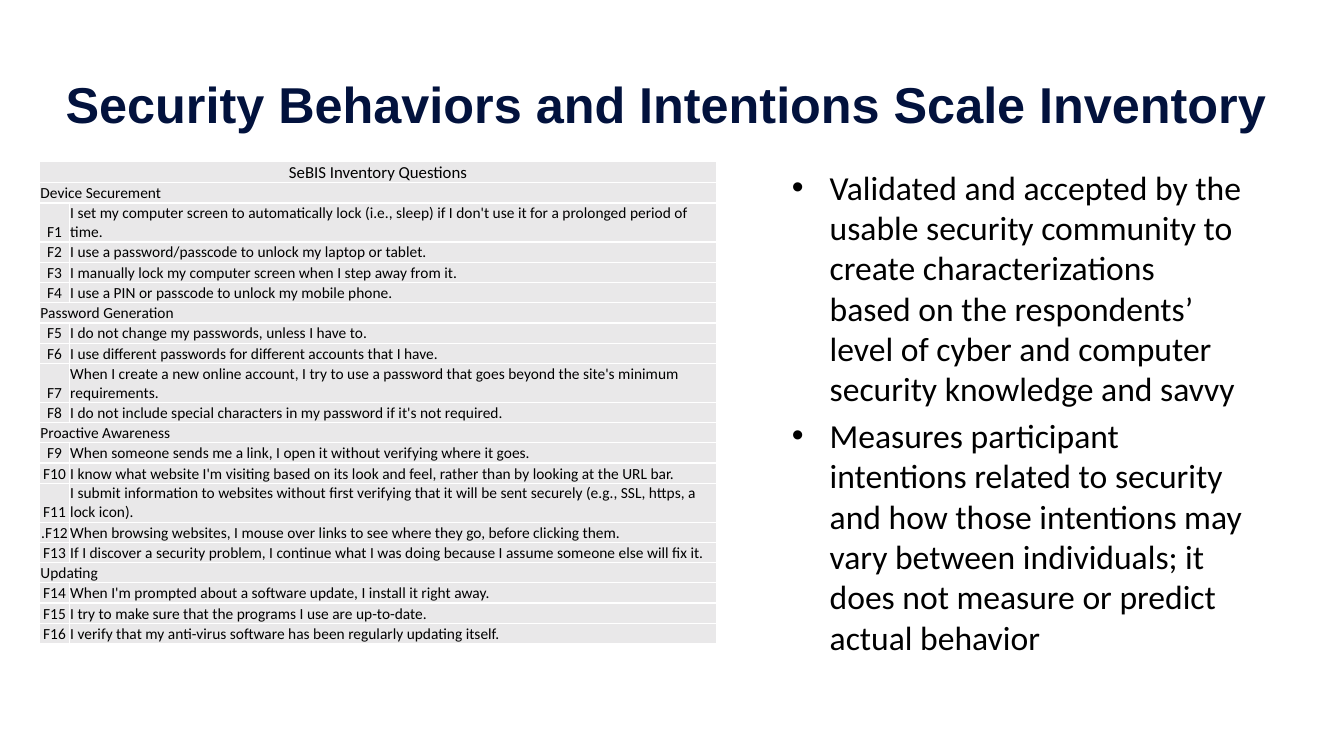
from dataclasses import dataclass

from lxml import etree
from pptx import Presentation
from pptx.dml.color import RGBColor
from pptx.enum.text import MSO_ANCHOR, PP_ALIGN
from pptx.oxml.ns import qn
from pptx.util import Cm, Pt

LEFT, CENTER = PP_ALIGN.LEFT, PP_ALIGN.CENTER
MIDDLE, BOTTOM, TOP = MSO_ANCHOR.MIDDLE, MSO_ANCHOR.BOTTOM, MSO_ANCHOR.TOP

COLORS = {"title": "02123D", "text": "000000", "cell": "E9E8E9", "border": "FFFFFF"}
ROW_HEIGHT, TALL_ROW_HEIGHT = 0.51, 0.98


@dataclass
class Question:
    code: str
    text: str
    tall: bool = False


@dataclass
class Section:
    name: str
    questions: list[Question]


SECTIONS = [
    Section("Device Securement", [
        Question("F1", "I set my computer screen to automatically lock (i.e., sleep) "
                 "if I don't use it for a prolonged period of time.", True),
        Question("F2", "I use a password/passcode to unlock my laptop or tablet."),
        Question("F3", "I manually lock my computer screen when I step away from it."),
        Question("F4", "I use a PIN or passcode to unlock my mobile phone."),
    ]),
    Section("Password Generation", [
        Question("F5", "I do not change my passwords, unless I have to."),
        Question("F6", "I use different passwords for different accounts that I have."),
        Question("F7", "When I create a new online account, I try to use a password "
                 "that goes beyond the site's minimum requirements.", True),
        Question("F8", "I do not include special characters in my password if it's not required."),
    ]),
    Section("Proactive Awareness", [
        Question("F9", "When someone sends me a link, I open it without verifying where it goes."),
        Question("F10", "I know what website I'm visiting based on its look and feel, "
                 "rather than by looking at the URL bar."),
        Question("F11", "I submit information to websites without first verifying that "
                 "it will be sent securely (e.g., SSL, https, a lock icon).", True),
        Question(".F12", "When browsing websites, I mouse over links to see where they go, "
                 "before clicking them."),
        Question("F13", "If I discover a security problem, I continue what I was doing "
                 "because I assume someone else will fix it."),
    ]),
    Section("Updating", [
        Question("F14", "When I'm prompted about a software update, I install it right away."),
        Question("F15", "I try to make sure that the programs I use are up-to-date."),
        Question("F16", "I verify that my anti-virus software has been regularly updating itself."),
    ]),
]

BULLETS = [
    "Validated and accepted by the usable security community to create characterizations "
    "based on the respondents’ level of cyber and computer security knowledge and savvy",
    "Measures participant intentions related to security and how those intentions may vary "
    "between individuals; it does not measure or predict actual behavior",
]


def set_font(p, name: str, size: int, color: str, bold: bool = False) -> None:
    p.font.name = name
    p.font.size = Pt(size)
    p.font.bold = bold
    p.font.color.rgb = RGBColor.from_string(COLORS[color])


def add_borders(cell) -> None:
    tc_pr = cell._tc.get_or_add_tcPr()
    for i, side in enumerate(("lnL", "lnR", "lnT", "lnB")):
        ln = etree.Element(qn(f"a:{side}"), w=str(Pt(1)))
        fill = etree.SubElement(ln, qn("a:solidFill"))
        etree.SubElement(fill, qn("a:srgbClr"), val=COLORS["border"])
        tc_pr.insert(i, ln)


def write_cell(cell, text: str, align=LEFT, size: int = 11) -> None:
    cell.text = text
    cell.vertical_anchor = BOTTOM
    cell.margin_left = cell.margin_right = cell.margin_top = Cm(0.02)
    cell.margin_bottom = 0
    p = cell.text_frame.paragraphs[0]
    p.alignment = align
    set_font(p, "Calibri", size, "text")


def write_heading(table, row: int, text: str, align=LEFT, size: int = 11) -> None:
    table.cell(row, 0).merge(table.cell(row, 1))
    write_cell(table.cell(row, 0), text, align, size)


def add_inventory(slide) -> None:
    count = 1 + sum(1 + len(section.questions) for section in SECTIONS)
    frame = slide.shapes.add_table(count, 2, Cm(1), Cm(4.07), Cm(17.06), Cm(count * ROW_HEIGHT))
    table = frame.table
    table.first_row = table.horz_banding = False
    table.columns[0].width, table.columns[1].width = Cm(0.75), Cm(16.31)
    for row in table.rows:
        row.height = Cm(ROW_HEIGHT)
    for cell in table.iter_cells():
        cell.fill.solid()
        cell.fill.fore_color.rgb = RGBColor.from_string(COLORS["cell"])
        add_borders(cell)

    write_heading(table, 0, "SeBIS Inventory Questions", CENTER, 12)
    i = 1
    for section in SECTIONS:
        write_heading(table, i, section.name)
        for i, question in enumerate(section.questions, i + 1):
            write_cell(table.cell(i, 0), question.code, CENTER)
            write_cell(table.cell(i, 1), question.text)
            if question.tall:
                table.rows[i].height = Cm(TALL_ROW_HEIGHT)
        i += 1


def add_bullets(slide) -> None:
    sp = slide.shapes.add_textbox(Cm(19.71), Cm(4.07), Cm(11.84), Cm(12.65))
    tf = sp.text_frame
    tf.word_wrap = True
    tf.vertical_anchor = TOP
    for i, text in enumerate(BULLETS):
        p = tf.paragraphs[0] if i == 0 else tf.add_paragraph()
        p.text = text
        p_pr = p._p.get_or_add_pPr()
        p_pr.set("marL", str(Cm(0.95)))
        p_pr.set("indent", str(-Cm(0.95)))
        etree.SubElement(p_pr, qn("a:buFont"), typeface="Arial")
        etree.SubElement(p_pr, qn("a:buChar"), char="•")
        set_font(p, "Calibri", 24, "text")
        if i:
            p.space_before = Pt(4.8)


def add_title(slide, text: str) -> None:
    title = slide.shapes.title
    title.left, title.top, title.width, title.height = Cm(1.4), Cm(1.17), Cm(31.09), Cm(2.87)
    tf = title.text_frame
    tf.text = text
    tf.vertical_anchor = MIDDLE
    p = tf.paragraphs[0]
    p.alignment = LEFT
    set_font(p, "Arial", 36, "title", True)


def main() -> None:
    prs = Presentation()
    prs.slide_width, prs.slide_height = Cm(33.87), Cm(19.05)
    slide = prs.slides.add_slide(prs.slide_layouts[5])
    add_title(slide, "Security Behaviors and Intentions Scale Inventory")
    add_inventory(slide)
    add_bullets(slide)
    prs.save("out.pptx")


if __name__ == "__main__":
    main()
